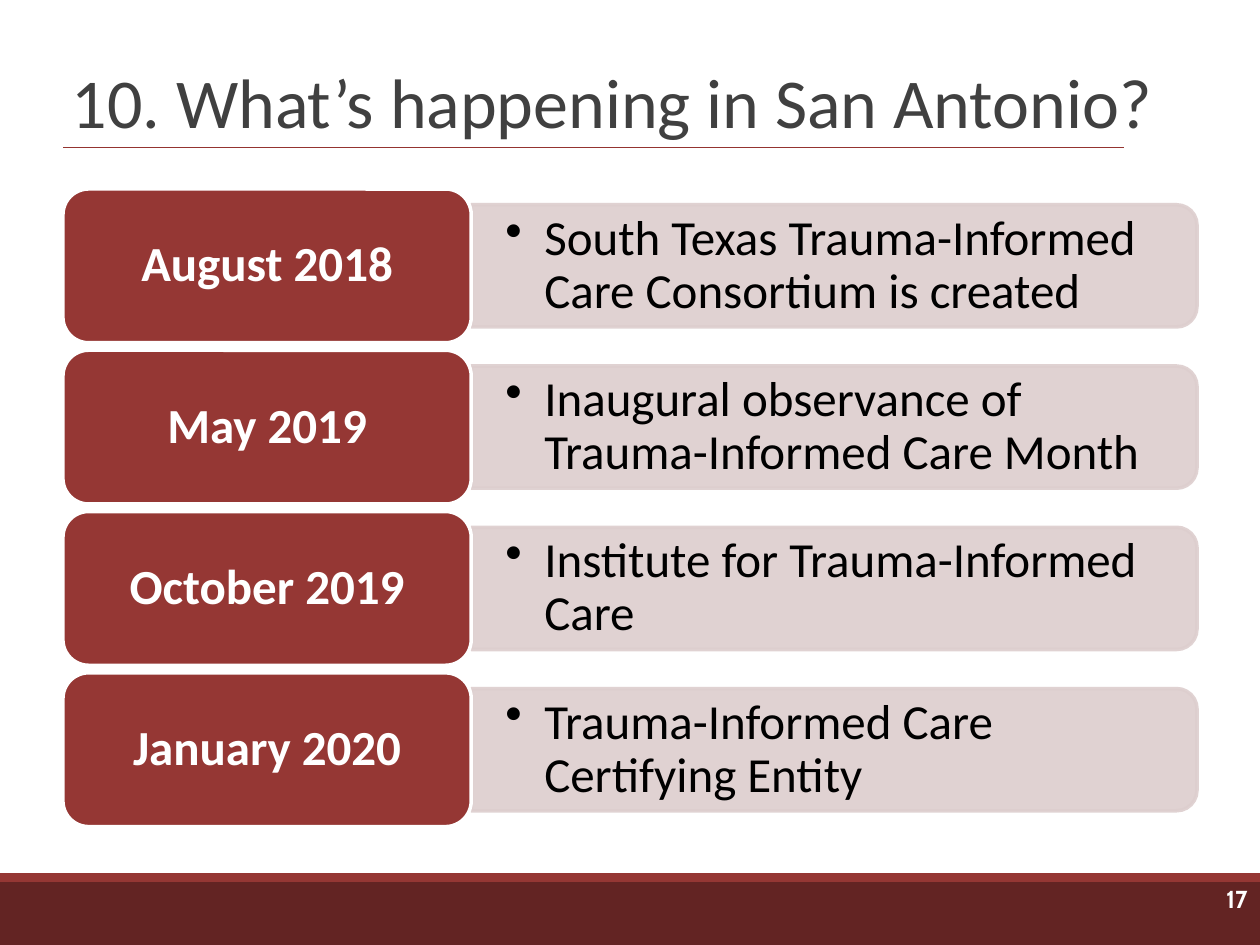
from lxml import etree
from pptx import Presentation
from pptx.dml.color import RGBColor
from pptx.enum.shapes import MSO_CONNECTOR, MSO_SHAPE
from pptx.enum.text import MSO_ANCHOR, PP_ALIGN
from pptx.oxml.ns import qn
from pptx.util import Inches, Pt

RECT = MSO_SHAPE.RECTANGLE
ROUND = MSO_SHAPE.ROUNDED_RECTANGLE
TAB = MSO_SHAPE.ROUND_2_SAME_RECTANGLE
LINE = MSO_CONNECTOR.STRAIGHT
MIDDLE = MSO_ANCHOR.MIDDLE
LEFT, CENTER, RIGHT = PP_ALIGN.LEFT, PP_ALIGN.CENTER, PP_ALIGN.RIGHT

RED = RGBColor(0x95, 0x37, 0x34)
DARK = RGBColor(0x63, 0x24, 0x23)
RULE = RGBColor(0x94, 0x34, 0x30)
PINK = RGBColor(0xDD, 0xCE, 0xCE)
GRAY = RGBColor(0x40, 0x40, 0x40)
WHITE = RGBColor(0xFF, 0xFF, 0xFF)
BLACK = RGBColor(0, 0, 0)

TITLE = "10. What’s happening in San Antonio?"
PAGE = "17"
EVENTS = [
    ("August 2018", "South Texas Trauma-Informed Care Consortium is created"),
    ("May 2019", "Inaugural observance of Trauma-Informed Care Month"),
    ("October 2019", "Institute for Trauma-Informed Care"),
    ("January 2020", "Trauma-Informed Care Certifying Entity"),
]
X, TOP, STEP = 0.5, 1.5, 1.28
DATE_W, DATE_H = 3.24, 1.22
BAR_W, BAR_H = 5.76, 0.97


def box(kind, x, y, w, h, fill, edge=None):
    shape = slide.shapes.add_shape(kind, Inches(x), Inches(y), Inches(w), Inches(h))
    shape.shadow.inherit = False
    shape.fill.solid()
    shape.fill.fore_color.rgb = fill
    if edge is None:
        shape.line.fill.background()
    else:
        shape.line.color.rgb = edge
        shape.line.width = Pt(2)
    return shape


def fade(paint, share):
    color = paint.find(".//" + qn("a:srgbClr"))
    etree.SubElement(color, qn("a:alpha"), val=str(share * 1000))


def write(shape, text, size, color, align, bold=False, font="Calibri"):
    frame = shape.text_frame
    frame.word_wrap = True
    para = frame.paragraphs[0]
    para.alignment = align
    run = para.add_run()
    run.text = text
    run.font.size = Pt(size)
    run.font.name = font
    run.font.bold = bold
    run.font.color.rgb = color
    return para


def text_box(x, y, w, h):
    return slide.shapes.add_textbox(Inches(x), Inches(y), Inches(w), Inches(h))


def add_bar(mid, text):
    x = X + DATE_W
    bar = box(TAB, x + (BAR_W - BAR_H) / 2, mid - BAR_W / 2, BAR_H, BAR_W, PINK, PINK)
    bar.rotation = 90
    props = bar._element.spPr
    fade(props.find(qn("a:solidFill")), 90)
    fade(props.find(qn("a:ln")), 90)
    note = text_box(x, mid - 0.44, 5.71, 0.88)
    frame = note.text_frame
    frame.vertical_anchor = MIDDLE
    frame.margin_left = frame.margin_right = Inches(0.27)
    frame.margin_top = frame.margin_bottom = 0
    para = write(note, text, 28, BLACK, LEFT)
    para.line_spacing = 0.9
    props = para._p.get_or_add_pPr()
    props.set("marL", str(Inches(0.31)))
    props.set("indent", str(-Inches(0.31)))
    etree.SubElement(props, qn("a:buChar"), char="•")


def add_date(y, text):
    date = box(ROUND, X, y, DATE_W, DATE_H, RED, WHITE)
    date.text_frame.vertical_anchor = MIDDLE
    write(date, text, 28, WHITE, CENTER, True).line_spacing = 0.9


deck = Presentation()
deck.slide_width, deck.slide_height = Inches(10), Inches(7.5)
slide = deck.slides.add_slide(deck.slide_layouts[5])

box(RECT, 0, 7, 10, 0.5, DARK)
box(RECT, 0, 6.93, 10, 0.07, RED)

title = slide.shapes.title
title.left, title.top = Inches(0.47), Inches(0.17)
title.width, title.height = Inches(9), Inches(1.25)
title.text_frame.vertical_anchor = MIDDLE
write(title, TITLE, 40, GRAY, LEFT)

for i, (date, event) in enumerate(EVENTS):
    y = TOP + i * STEP
    add_bar(y + DATE_H / 2, event)
    add_date(y, date)

rule = slide.shapes.add_connector(LINE, Inches(X), Inches(1.17), Inches(8.92), Inches(1.17))
rule.line.color.rgb = RULE
rule.line.width = Pt(0.75)
etree.SubElement(rule._element.spPr, qn("a:effectLst"))

write(text_box(8.67, 6.97, 1.33, 0.51), PAGE, 14, WHITE, RIGHT, True, "Cabin")

deck.save("out.pptx")
